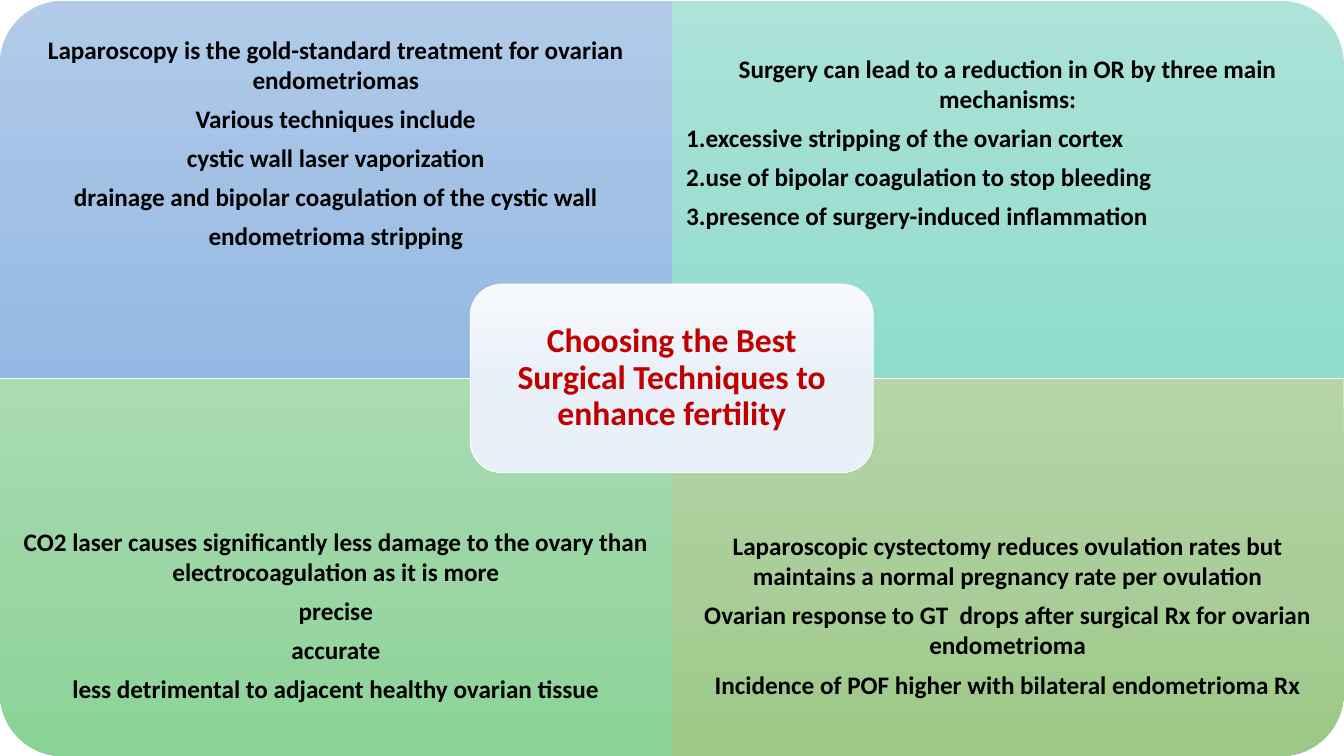
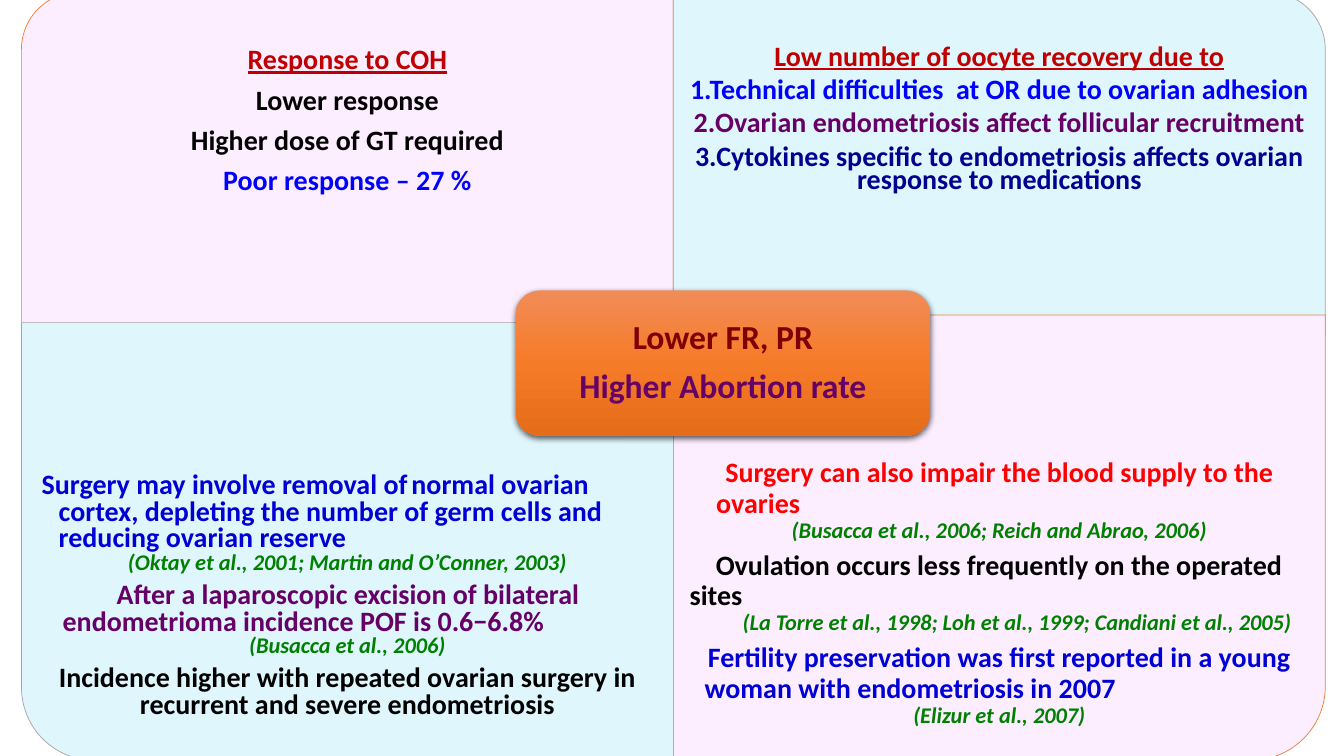
from lxml import etree
from pptx import Presentation
from pptx.dml.color import RGBColor
from pptx.enum.shapes import MSO_SHAPE as SHAPE
from pptx.enum.text import MSO_ANCHOR as ANCHOR, PP_ALIGN as ALIGN
from pptx.oxml import parse_xml
from pptx.util import Cm, Pt

NS = "http://schemas.openxmlformats.org/drawingml/2006/main"
FONT = "Calibri"
BLACK, RED, BLUE, NAVY = "000000", "C00000", "0000FF", "0000D4"
PURPLE, GREEN = "660066", "008000"
PINK, AQUA, ORANGE, GREY = "FCEEFF", "DFF6FD", "ED7D31", "A5A5A5"

# Paragraph formats
LEFT = dict(align=ALIGN.LEFT)
HEAD = dict(color=RED, underline=True)
CITE = dict(size=16, color=GREEN, italic=True)


def lead(color, margin, indent, **more):
    """A statement whose citation follows directly below it."""
    return dict(color=color, align=ALIGN.LEFT, margin=margin,
                indent=indent, after=0, **more)


# Content: quadrants run top left, top right, bottom left, bottom right
SLIDES = [
    dict(
        left=0, width=16.93, inset=0.36, size=18, spacing=1.0,
        quadrants=[
            dict(top=0.02, height=9.5, fill=("B1CBE9", "A3C1E5", "93B9E4"), text=[
                ("Laparoscopy is the gold-standard treatment for ovarian endometriomas", {}),
                ("Various techniques include", {}),
                ("cystic wall laser vaporization", {}),
                ("drainage and bipolar coagulation of the cystic wall", {}),
                ("endometrioma stripping", {})]),
            dict(top=0.02, height=9.5, fill=("ADE3D9", "9FDED2", "8EDCCE"), text=[
                ("Surgery can lead to a reduction in OR by three main mechanisms:", {}),
                ("1.excessive stripping of the ovarian cortex", LEFT),
                ("2.use of bipolar coagulation to stop bleeding", LEFT),
                ("3.presence of surgery-induced inflammation", LEFT)]),
            dict(top=9.55, height=9.5, fill=("AADCB2", "9CD6A5", "8AD396"), text=[
                ("CO2 laser causes significantly less damage to the ovary than "
                 "electrocoagulation as it is more", {}),
                ("precise", {}),
                ("accurate", {}),
                ("less detrimental to adjacent healthy ovarian tissue", {})]),
            dict(top=9.55, height=9.5, fill=("B5D5A7", "AACE9A", "9CC987"), text=[
                ("Laparoscopic cystectomy reduces ovulation rates but maintains "
                 "a normal pregnancy rate per ovulation", {}),
                ("Ovarian response to GT  drops after surgical Rx for ovarian endometrioma", {}),
                ("Incidence of POF higher with bilateral endometrioma Rx", {})]),
        ],
        center=dict(
            box=(11.85, 7.16, 10.16, 4.75), fill=("F7F9FC", "EAF0F8", "E7EEF8"),
            line="FFFFFF", text=[
                ("Choosing the Best Surgical Techniques to enhance fertility",
                 dict(color=RED))]),
    ),
    dict(
        left=0.54, width=16.43, inset=0.41, size=20, spacing=0.9,
        quadrants=[
            dict(top=-0.2, height=8.66, fill=(PINK,), line=ORANGE, text=[
                ("Response to COH", HEAD),
                ("Lower response", {}),
                ("Higher dose of GT required", {}),
                ("Poor response – 27 %", dict(color=BLUE))]),
            dict(top=-0.2, height=8.66, fill=(AQUA,), line=GREY, spacing=0.7, text=[
                ("Low number of oocyte recovery due to", HEAD),
                ("1.Technical difficulties  at OR due to ovarian adhesion", dict(color=BLUE)),
                ("2.Ovarian endometriosis affect follicular recruitment", dict(color=PURPLE)),
                ("3.Cytokines specific to endometriosis affects ovarian response "
                 "to medications", dict(color="000090"))]),
            dict(top=8.13, height=11.03, fill=(AQUA,), line=GREY, spacing=0.8, text=[
                ("Surgery may involve removal of\tnormal ovarian cortex, depleting the "
                 "number of germ cells and reducing ovarian reserve",
                 lead(NAVY, 0.53, -0.43, tab=11.09)),
                ("(Oktay et al., 2001; Martin and O’Conner, 2003)", CITE),
                ("After a laparoscopic excision of bilateral endometrioma incidence "
                 "POF is 0.6−6.8%", lead(PURPLE, 0.63, 1.36)),
                ("(Busacca et al., 2006)", CITE),
                ("Incidence higher with repeated ovarian surgery in recurrent and "
                 "severe endometriosis", {})]),
            dict(top=7.94, height=11.22, fill=(PINK,), line=ORANGE, text=[
                ("Surgery can also impair the blood supply to the ovaries",
                 lead("FF0000", 0.67, 0.23)),
                ("(Busacca et al., 2006; Reich and Abrao, 2006)", CITE),
                ("Ovulation occurs less frequently on the operated sites",
                 lead(BLACK, 0, 0.66)),
                ("(La Torre et al., 1998; Loh et al., 1999; Candiani et al., 2005)",
                 dict(CITE, margin=0.9)),
                ("Fertility preservation was first reported in a young woman with "
                 "endometriosis in 2007", lead(NAVY, 0.38, 0.08)),
                ("(Elizur et al., 2007)", CITE)]),
        ],
        center=dict(
            box=(13.0, 7.32, 10.44, 3.66), fill=("F18C57", "F67B28", "E56C19"),
            shadow=True, text=[
                ("Lower FR, PR", dict(color="800000")),
                ("Higher Abortion rate", dict(color=PURPLE))]),
    ),
]
ROTATIONS = (270, 0, 180, 90)  # turns the rounded corner outwards
TEXT_SHARE = 0.75              # part of a quadrant's height that holds text


def rgb(value):
    return RGBColor.from_string(value)


def paint(sp, fill, line=None, shadow=False):
    """Solid fill for one colour, an upright gradient for several."""
    sp.shadow.inherit = False
    if len(fill) == 1:
        sp.fill.solid()
        sp.fill.fore_color.rgb = rgb(fill[0])
    else:
        stops = "".join(
            f'<a:gs pos="{i * 100000 // (len(fill) - 1)}"><a:srgbClr val="{c}"/></a:gs>'
            for i, c in enumerate(fill))
        props = sp._element.spPr
        props.find(f"{{{NS}}}prstGeom").addnext(parse_xml(
            f'<a:gradFill xmlns:a="{NS}" rotWithShape="0"><a:gsLst>{stops}</a:gsLst>'
            '<a:lin ang="5400000" scaled="0"/></a:gradFill>'))
    if line:
        sp.line.color.rgb = rgb(line)
        sp.line.width = Pt(0.5)
    else:
        sp.line.fill.background()
    if shadow:
        effects = sp._element.spPr.find(f"{{{NS}}}effectLst")
        effects.append(parse_xml(
            f'<a:outerShdw xmlns:a="{NS}" blurRad="57150" dist="19050" dir="5400000" '
            'algn="ctr" rotWithShape="0"><a:srgbClr val="000000">'
            '<a:alpha val="63000"/></a:srgbClr></a:outerShdw>'))


def write(sp, paragraphs, size, spacing, inset):
    tf = sp.text_frame
    frame = dict(word_wrap=True, vertical_anchor=ANCHOR.MIDDLE)
    frame.update({f"margin_{side}": Cm(inset)
                  for side in ("left", "top", "right", "bottom")})
    for name, value in frame.items():
        setattr(tf, name, value)
    for i, (text, fmt) in enumerate(paragraphs):
        p = tf.paragraphs[0] if i == 0 else tf.add_paragraph()
        points = fmt.get("size", size)
        pPr = p._p.get_or_add_pPr()
        if "margin" in fmt:
            pPr.set("marL", str(Cm(fmt["margin"])))
            pPr.set("indent", str(Cm(fmt.get("indent", 0))))
        if "tab" in fmt:
            tabs = etree.SubElement(pPr, f"{{{NS}}}tabLst")
            etree.SubElement(tabs, f"{{{NS}}}tab", pos=str(Cm(fmt["tab"])), algn="l")
        p.alignment = fmt.get("align", ALIGN.CENTER)
        p.line_spacing = spacing
        p.space_after = Pt(fmt.get("after", round(points * 0.35, 1)))
        r = p.add_run()
        r.text = text
        font = dict(name=FONT, size=Pt(points), bold=True,
                    italic=fmt.get("italic", False),
                    underline=fmt.get("underline", False))
        for name, value in font.items():
            setattr(r.font, name, value)
        r.font.color.rgb = rgb(fmt.get("color", BLACK))


def add_quadrant(s, index, quad, data):
    row, col = divmod(index, 2)
    x, y = data["left"] + col * data["width"], quad["top"]
    w, h = data["width"], quad["height"]
    # A quarter turn swaps width and height around the same centre
    rotation = ROTATIONS[index]
    sw, sh = (h, w) if rotation % 180 else (w, h)
    sp = s.shapes.add_shape(SHAPE.ROUND_1_RECTANGLE, Cm(x + (w - sw) / 2),
                            Cm(y + (h - sh) / 2), Cm(sw), Cm(sh))
    sp.rotation = rotation
    paint(sp, quad["fill"], quad.get("line"))
    # Text keeps to the outer part, clear of the centre box
    text_h = h * TEXT_SHARE
    box = s.shapes.add_textbox(Cm(x), Cm(y + row * (h - text_h)), Cm(w), Cm(text_h))
    write(box, quad["text"], data["size"],
          quad.get("spacing", data["spacing"]), data["inset"])


def add_center(s, center):
    sp = s.shapes.add_shape(SHAPE.ROUNDED_RECTANGLE, *map(Cm, center["box"]))
    paint(sp, center["fill"], center.get("line"), center.get("shadow", False))
    write(sp, center["text"], size=24, spacing=0.9, inset=0.3)


def main():
    prs = Presentation()
    prs.slide_width, prs.slide_height = Cm(33.87), Cm(19.05)
    for data in SLIDES:
        s = prs.slides.add_slide(prs.slide_layouts[6])
        for index, quad in enumerate(data["quadrants"]):
            add_quadrant(s, index, quad, data)
        add_center(s, data["center"])
    prs.save("out.pptx")


if __name__ == "__main__":
    main()
